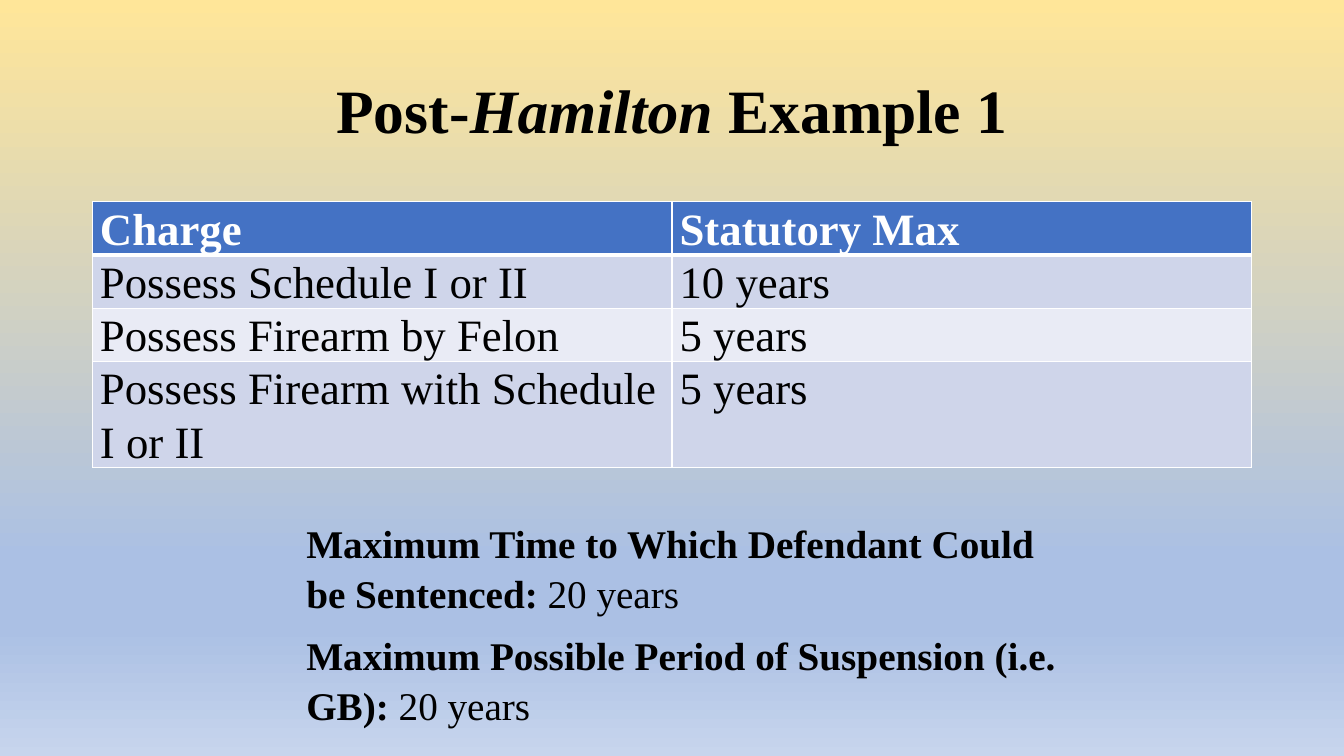
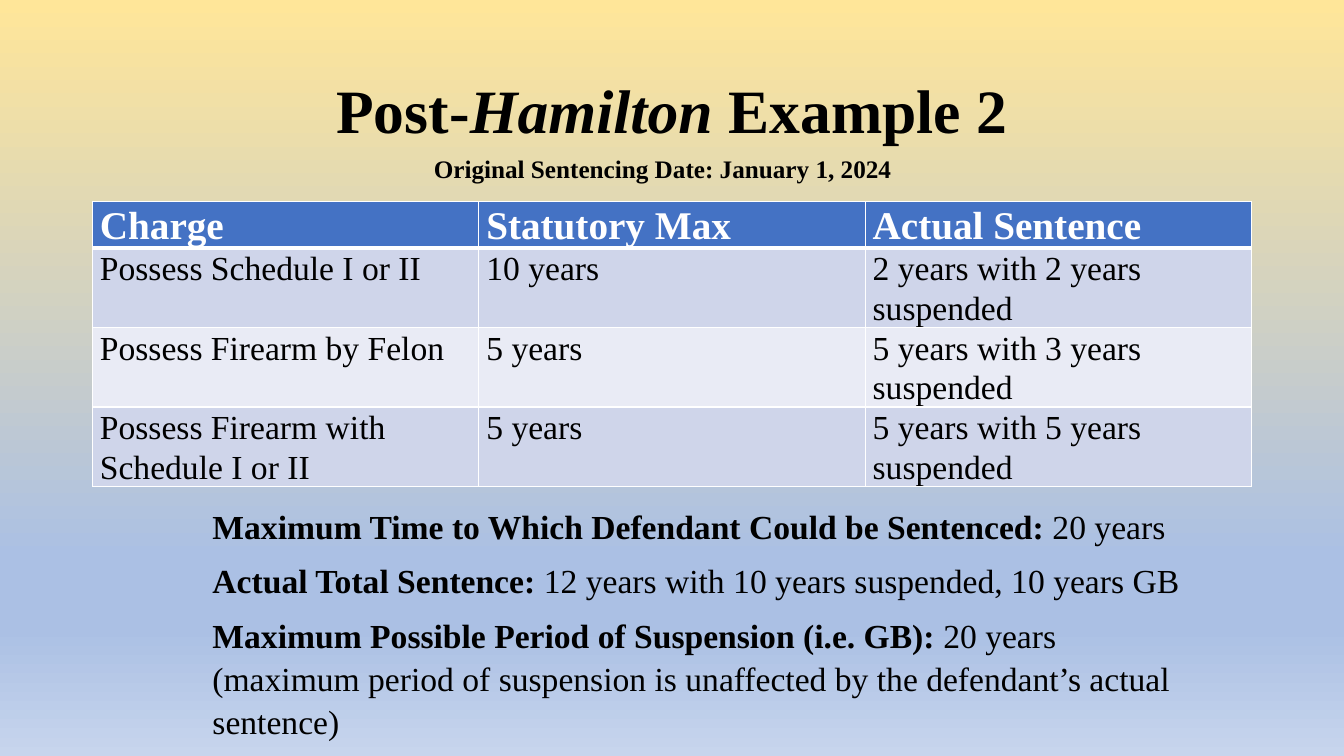
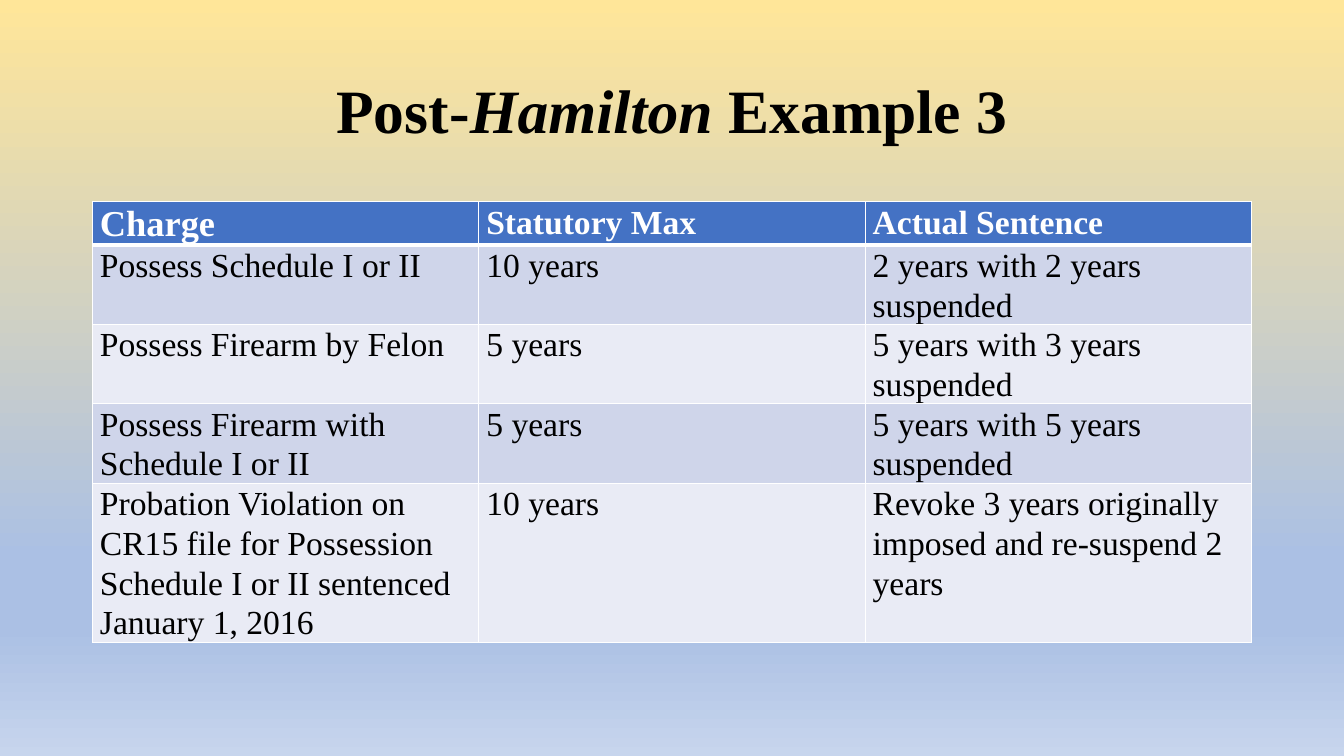
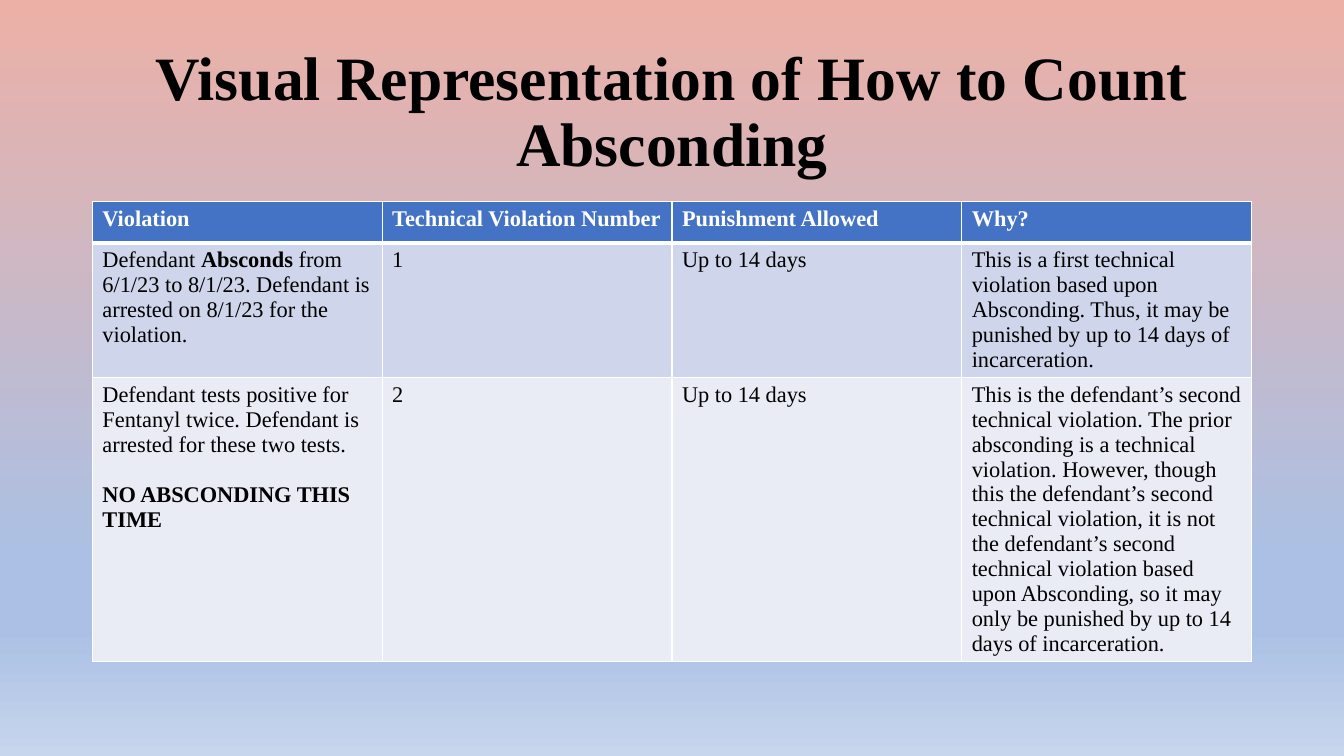
from dataclasses import dataclass
from typing import Sequence, Union

import lxml.etree
import pptx
import pptx.dml.color
import pptx.enum.text
import pptx.oxml.ns
import pptx.util

Pt = pptx.util.Pt
Align = pptx.enum.text.PP_ALIGN
Anchor = pptx.enum.text.MSO_ANCHOR
qn = pptx.oxml.ns.qn

# Shared style
FONT = "Times New Roman"
COLORS = {
    "text": "000000", "white": "FFFFFF", "header": "4472C4",
    "odd row": "CFD5EA", "even row": "E9EBF5",
    "yellow": "FFE699", "coral": "ECB0A6", "blue": "ABC0E4", "pale blue": "C7D5ED",
}
LEFT, WIDTH, TABLE_TOP, ROW_HEIGHT = 66, 828, 144, 29.5
LINE_SPACING = 1.07


@dataclass(frozen=True)
class Span:
    text: str
    bold: bool = False
    italic: bool = False


Para = Sequence[Span]
Content = Union[str, Sequence[Para]]


@dataclass(frozen=True)
class Box:
    left: float
    top: float
    width: float
    height: float
    paras: Sequence[Para]
    size: float
    align: Align = Align.LEFT


@dataclass(frozen=True)
class Grid:
    header: Sequence[str]
    rows: Sequence[Sequence[Content]]
    header_sizes: Sequence[float]
    size: float
    margins: tuple[float, float] = (5.4, 0)
    spacing: float = LINE_SPACING


@dataclass(frozen=True)
class Page:
    title: Para
    grid: Grid
    boxes: Sequence[Box] = ()
    top_color: str = "yellow"


# Content
def example_title(number: int) -> Para:
    return [Span("Post-", True), Span("Hamilton ", True, True), Span(f"Example {number}", True)]


def labelled(label: str, value: str) -> Para:
    return [Span(label + " ", True), Span(value)]


HEADER = ["Charge", "Statutory Max", "Actual Sentence"]
CHARGES = [
    ["Possess Schedule I or II", "10 years", "2 years with 2 years suspended"],
    ["Possess Firearm by Felon", "5 years", "5 years with 3 years suspended"],
    ["Possess Firearm with Schedule I or II", "5 years", "5 years with 5 years suspended"],
]
PROBATION = [
    "Probation Violation on CR15 file for Possession Schedule I or II sentenced January 1, 2016",
    "10 years",
    "Revoke 3 years originally imposed and re-suspend 2 years",
]
MAX_TIME = labelled("Maximum Time to Which Defendant Could be Sentenced:", "20 years")
MAX_SUSPENSION = "Maximum Possible Period of Suspension (i.e. GB):"

ABSCONDING = Grid(
    ["Violation", "Technical Violation Number", "Punishment Allowed", "Why?"],
    [
        [
            [[Span("Defendant "), Span("Absconds", True),
              Span(" from 6/1/23 to 8/1/23. Defendant is arrested on 8/1/23 for the violation.")]],
            "1",
            "Up to 14 days",
            "This is a first technical violation based upon Absconding. Thus, it may be "
            "punished by up to 14 days of incarceration.",
        ],
        [
            [[Span("Defendant tests positive for Fentanyl twice. Defendant is arrested for "
                   "these two tests.")],
             [Span("NO ABSCONDING THIS TIME", True)]],
            "2",
            "Up to 14 days",
            "This is the defendant’s second technical violation. The prior absconding is a "
            "technical violation. However, though this the defendant’s second technical "
            "violation, it is not the defendant’s second technical violation based upon "
            "Absconding, so it may only be punished by up to 14 days of incarceration.",
        ],
    ],
    [16] * 4, 16, margins=(7.2, 3.6), spacing=1,
)

PAGES = [
    Page(
        example_title(1),
        Grid(HEADER[:2], [row[:2] for row in CHARGES], [32] * 2, 32),
        [Box(211.7, 365, 567.4, 158.4,
             [MAX_TIME, labelled(MAX_SUSPENSION, "20 years")], 28)],
    ),
    Page(
        example_title(2),
        Grid(HEADER, CHARGES, [28] * 3, 24),
        [
            Box(144.7, 355.7, 722.2, 177.1, [
                MAX_TIME,
                labelled("Actual Total Sentence:",
                         "12 years with 10 years suspended, 10 years GB"),
                labelled(MAX_SUSPENSION, "20 years (maximum period of suspension is "
                         "unaffected by the defendant’s actual sentence)"),
            ], 24),
            Box(233.3, 104.4, 480.2, 28.8,
                [[Span("Original Sentencing Date: January 1, 2024", True)]], 18, Align.CENTER),
        ],
    ),
    Page(example_title(3), Grid(HEADER, CHARGES + [PROBATION], [26, 24, 24], 24)),
    Page([Span("Visual Representation of How to Count Absconding", True)],
         ABSCONDING, top_color="coral"),
]


# Drawing
def rgb(name: str) -> pptx.dml.color.RGBColor:
    return pptx.dml.color.RGBColor.from_string(COLORS[name])


def write_text(frame, content: Content, *, size: float, color: str = "text",
               bold: bool = False, align: Align = Align.LEFT,
               spacing: float = LINE_SPACING, after: float = 0, gap: float = 0) -> None:
    """Fill a text frame; gap is the space before each later paragraph."""
    paras = [[Span(content, bold)]] if isinstance(content, str) else content
    for index, spans in enumerate(paras):
        para = frame.add_paragraph() if index else frame.paragraphs[0]
        para.alignment, para.line_spacing = align, spacing
        para.space_before, para.space_after = Pt(gap if index else 0), Pt(after)
        for span in spans:
            run = para.add_run()
            run.text = span.text
            run.font.name, run.font.size = FONT, Pt(size)
            run.font.bold, run.font.italic = span.bold, span.italic
            run.font.color.rgb = rgb(color)


def paint_background(slide, top_color: str) -> None:
    fill = slide.background.fill
    fill.gradient()
    fill.gradient_angle = 270
    stops = slide.background._cSld.find(".//" + qn("a:gsLst"))
    for stop in list(stops):
        stops.remove(stop)
    for percent, name in ((0, top_color), (74, "blue"), (83, "blue"), (100, "pale blue")):
        stop = lxml.etree.SubElement(stops, qn("a:gs"), pos=str(percent * 1000))
        lxml.etree.SubElement(stop, qn("a:srgbClr"), val=COLORS[name])


def add_title(slide, spans: Para) -> None:
    title = slide.shapes.title
    title.left, title.top, title.width, title.height = map(Pt, (LEFT, 28.75, WIDTH, 104.4))
    title.text_frame.vertical_anchor = Anchor.MIDDLE
    write_text(title.text_frame, [spans], size=44, align=Align.CENTER, spacing=0.9)


def add_borders(cell, top: float, bottom: float) -> None:
    properties = cell._tc.get_or_add_tcPr()
    for side, width in (("L", 1), ("R", 1), ("T", top), ("B", bottom)):
        line = lxml.etree.SubElement(properties, qn(f"a:ln{side}"), w=str(Pt(width)))
        fill = lxml.etree.SubElement(line, qn("a:solidFill"))
        lxml.etree.SubElement(fill, qn("a:srgbClr"), val=COLORS["white"])


def add_grid(slide, grid: Grid) -> None:
    columns, rows = len(grid.header), [grid.header, *grid.rows]
    table = slide.shapes.add_table(len(rows), columns, Pt(LEFT), Pt(TABLE_TOP),
                                   Pt(WIDTH), Pt(ROW_HEIGHT * len(rows))).table
    for column in table.columns:
        column.width = Pt(WIDTH / columns)
    for row_index, row in enumerate(rows):
        is_header = row_index == 0
        fill_name = "header" if is_header else "odd row" if row_index % 2 else "even row"
        for column_index, content in enumerate(row):
            cell = table.cell(row_index, column_index)
            side, edge = map(Pt, grid.margins)
            cell.margin_left = cell.margin_right = side
            cell.margin_top = cell.margin_bottom = edge
            add_borders(cell, top=3 if row_index == 1 else 1, bottom=3 if is_header else 1)
            cell.fill.solid()
            cell.fill.fore_color.rgb = rgb(fill_name)
            write_text(cell.text_frame, content, bold=is_header, spacing=grid.spacing,
                       size=grid.header_sizes[column_index] if is_header else grid.size,
                       color="white" if is_header else "text", gap=18)


def add_box(slide, box: Box) -> None:
    shape = slide.shapes.add_textbox(*map(Pt, (box.left, box.top, box.width, box.height)))
    frame = shape.text_frame
    frame.word_wrap = True
    frame.auto_size = pptx.enum.text.MSO_AUTO_SIZE.SHAPE_TO_FIT_TEXT
    write_text(frame, box.paras, size=box.size, align=box.align, after=8)


def main() -> None:
    deck = pptx.Presentation()
    deck.slide_width, deck.slide_height = Pt(960), Pt(540)
    title_only = deck.slide_layouts[5]
    for page in PAGES:
        slide = deck.slides.add_slide(title_only)
        paint_background(slide, page.top_color)
        add_title(slide, page.title)
        add_grid(slide, page.grid)
        for box in page.boxes:
            add_box(slide, box)
    deck.save("out.pptx")


if __name__ == "__main__":
    main()
